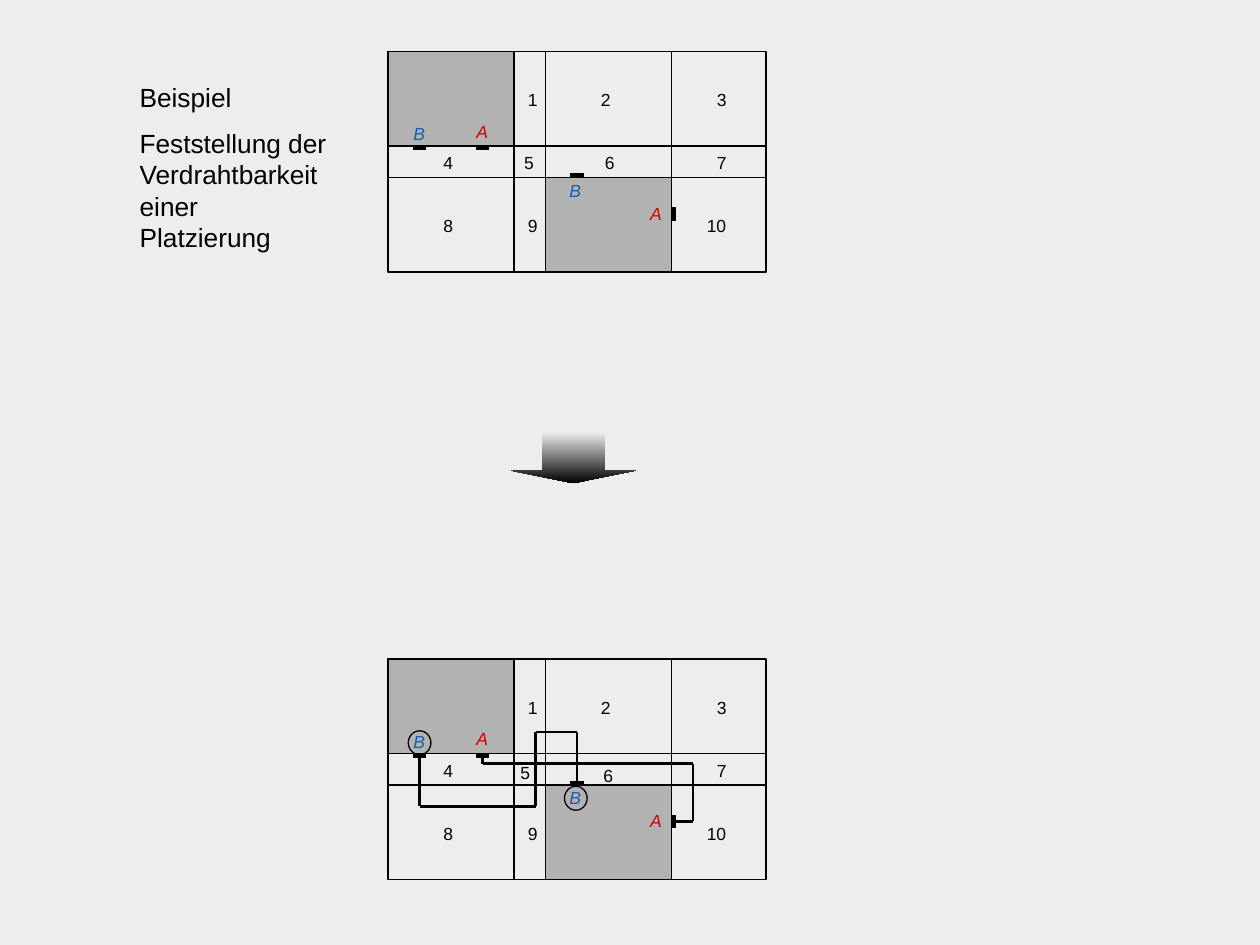
from dataclasses import dataclass

from pptx import Presentation
from pptx.dml.color import RGBColor
from pptx.enum.shapes import MSO_CONNECTOR, MSO_SHAPE
from pptx.enum.text import MSO_AUTO_SIZE
from pptx.oxml.ns import qn
from pptx.util import Inches, Pt

RECTANGLE = MSO_SHAPE.RECTANGLE
ELLIPSE = MSO_SHAPE.OVAL
RIGHT_ARROW = MSO_SHAPE.RIGHT_ARROW
STRAIGHT = MSO_CONNECTOR.STRAIGHT
FIT_SHAPE = MSO_AUTO_SIZE.SHAPE_TO_FIT_TEXT


@dataclass(frozen=True)
class Theme:
    font: str = "Arial"
    background: RGBColor = RGBColor(0xED, 0xED, 0xED)
    block: RGBColor = RGBColor(0xB2, 0xB2, 0xB2)
    ink: RGBColor = RGBColor(0, 0, 0)
    net_a: RGBColor = RGBColor(0xCC, 0, 0)
    net_b: RGBColor = RGBColor(0x18, 0x60, 0xAB)
    arrow_start: RGBColor = RGBColor(0xEA, 0xEA, 0xEA)
    caption_size: Pt = Pt(15)
    label_size: Pt = Pt(10)
    caption_gap: Pt = Pt(8)
    thin: Pt = Pt(0.75)
    wire: Pt = Pt(1.5)


THEME = Theme()

# Floorplan geometry, in inches from its top left corner
PLAN_LEFT, PLAN_WIDTH, PLAN_HEIGHT = 3.08, 3, 1.75
ROW_CUTS = (1, 0.75)
COLUMN_CUTS = (1, 1.25, 2.25)
BLOCKS = ((1.25, 1), (0, 0))
BLOCK_SIZE = (1, 0.75)
PINS = ((0.2, 0.75, 0.1, 0.03), (0.7, 0.75, 0.1, 0.03),
        (1.45, 0.97, 0.1, 0.03), (2.25, 1.24, 0.03, 0.1))
NET_LABELS = (("B", 0.09, 0.52, 0.31), ("A", 0.59, 0.5, 0.41),
              ("B", 1.33, 0.97, 0.26), ("A", 1.97, 1.15, 0.41))
CHANNEL_LABELS = {
    "1": (1, 0.25), "2": (1.58, 0.25), "3": (2.5, 0.25),
    "4": (0.33, 0.75), "5": (0.97, 0.75), "6": (1.61, 0.75), "7": (2.5, 0.75),
    "8": (0.33, 1.25), "9": (1, 1.25), "10": (2.42, 1.25),
}
# The routed plan moves two numbers clear of the wires
ROUTED_LABELS = CHANNEL_LABELS | {"5": (0.94, 0.77), "6": (1.6, 0.79)}
LABEL_HEIGHT = 0.27

# Routes and net B markers in the lower floorplan, in slide inches
ROUTES = (
    ((3.33, 5.98), (3.33, 6.4), (4.25, 6.4), (4.25, 5.81), (4.58, 5.81), (4.58, 6.23)),
    ((3.83, 5.98), (3.83, 6.06), (5.5, 6.06), (5.5, 6.52), (5.33, 6.52)),
)
MARKERS = ((3.24, 5.8), (4.48, 6.24))


def add_figure(slide, kind, left, top, width, height, fill=None, outlined=True):
    shape = slide.shapes.add_shape(
        kind, Inches(left), Inches(top), Inches(width), Inches(height))
    shape.shadow.inherit = False
    if fill is None:
        shape.fill.background()
    else:
        shape.fill.solid()
        shape.fill.fore_color.rgb = fill
    if outlined:
        shape.line.color.rgb = THEME.ink
        shape.line.width = THEME.thin
    else:
        shape.line.fill.background()
    return shape


def add_line(slide, start, end, width):
    connector = slide.shapes.add_connector(
        STRAIGHT, *(Inches(value) for value in (*start, *end)))
    connector.line.color.rgb = THEME.ink
    connector.line.width = width
    properties = connector._element.spPr
    properties.append(properties.makeelement(qn("a:effectLst"), {}))


def add_text_frame(slide, left, top, width, height, side_inset):
    text_box = slide.shapes.add_textbox(
        Inches(left), Inches(top), Inches(width), Inches(height))
    frame = text_box.text_frame
    frame.word_wrap = True
    frame.margin_left = frame.margin_right = Inches(side_inset)
    return frame


def add_run(paragraph, text, size, color, italic=False):
    run = paragraph.add_run()
    run.text = text
    run.font.name = THEME.font
    run.font.size = size
    run.font.color.rgb = color
    run.font.italic = italic


def add_label(slide, text, left, top, width, color=THEME.ink, italic=False):
    frame = add_text_frame(slide, left, top, width, LABEL_HEIGHT, 0.11)
    frame.auto_size = FIT_SHAPE
    add_run(frame.paragraphs[0], text, THEME.label_size, color, italic)


def add_caption(slide):
    frame = add_text_frame(slide, 1.01, 0.6, 1.91, 1.16, 0.1)
    heading = frame.paragraphs[0]
    add_run(heading, "Beispiel", THEME.caption_size, THEME.ink)
    body = frame.add_paragraph()
    body.space_before = THEME.caption_gap
    lines = ("Feststellung der", "Verdrahtbarkeit einer", "Platzierung")
    for index, line in enumerate(lines):
        if index:
            body.add_line_break()
        add_run(body, line, THEME.caption_size, THEME.ink)


def add_floorplan(slide, top, channel_labels):
    # Blocks, frame and channel grid
    for x, y in BLOCKS:
        add_figure(slide, RECTANGLE, PLAN_LEFT + x, top + y, *BLOCK_SIZE, THEME.block)
    add_figure(slide, RECTANGLE, PLAN_LEFT, top, PLAN_WIDTH, PLAN_HEIGHT)
    right, bottom = PLAN_LEFT + PLAN_WIDTH, top + PLAN_HEIGHT
    for y in ROW_CUTS:
        add_line(slide, (PLAN_LEFT, top + y), (right, top + y), THEME.thin)
    for x in COLUMN_CUTS:
        add_line(slide, (PLAN_LEFT + x, top), (PLAN_LEFT + x, bottom), THEME.thin)

    # Pins with their nets, then channel numbers
    for x, y, width, height in PINS:
        add_figure(slide, RECTANGLE, PLAN_LEFT + x, top + y, width, height, THEME.ink)
    net_colors = {"A": THEME.net_a, "B": THEME.net_b}
    for net, x, y, width in NET_LABELS:
        add_label(slide, net, PLAN_LEFT + x, top + y, width, net_colors[net], True)
    for number, (x, y) in channel_labels.items():
        width = 0.33 if len(number) == 1 else 0.5
        add_label(slide, number, PLAN_LEFT + x, top + y, width)


def add_step_arrow(slide):
    arrow = add_figure(slide, RIGHT_ARROW, 4.35, 3.14, 0.4, 0.99, outlined=False)
    arrow.rotation = 90
    arrow.adjustments[0] = 0.5
    arrow.adjustments[1] = 0.25
    arrow.fill.gradient()
    arrow.fill.gradient_angle = 0
    colors = (THEME.arrow_start, THEME.ink)
    for position, (stop, color) in enumerate(zip(arrow.fill.gradient_stops, colors)):
        stop.position = position
        stop.color.rgb = color


def add_routes(slide):
    for route in ROUTES:
        for start, end in zip(route, route[1:]):
            add_line(slide, start, end, THEME.wire)
    for left, top in MARKERS:
        add_figure(slide, ELLIPSE, left, top, 0.18, 0.19)


def main():
    presentation = Presentation()
    presentation.slide_width = Inches(10)
    presentation.slide_height = Inches(7.5)
    slide = presentation.slides.add_slide(presentation.slide_layouts[6])
    slide.background.fill.solid()
    slide.background.fill.fore_color.rgb = THEME.background

    add_caption(slide)
    add_floorplan(slide, 0.41, CHANNEL_LABELS)
    add_step_arrow(slide)
    add_floorplan(slide, 5.23, ROUTED_LABELS)
    add_routes(slide)
    presentation.save("out.pptx")


if __name__ == "__main__":
    main()
